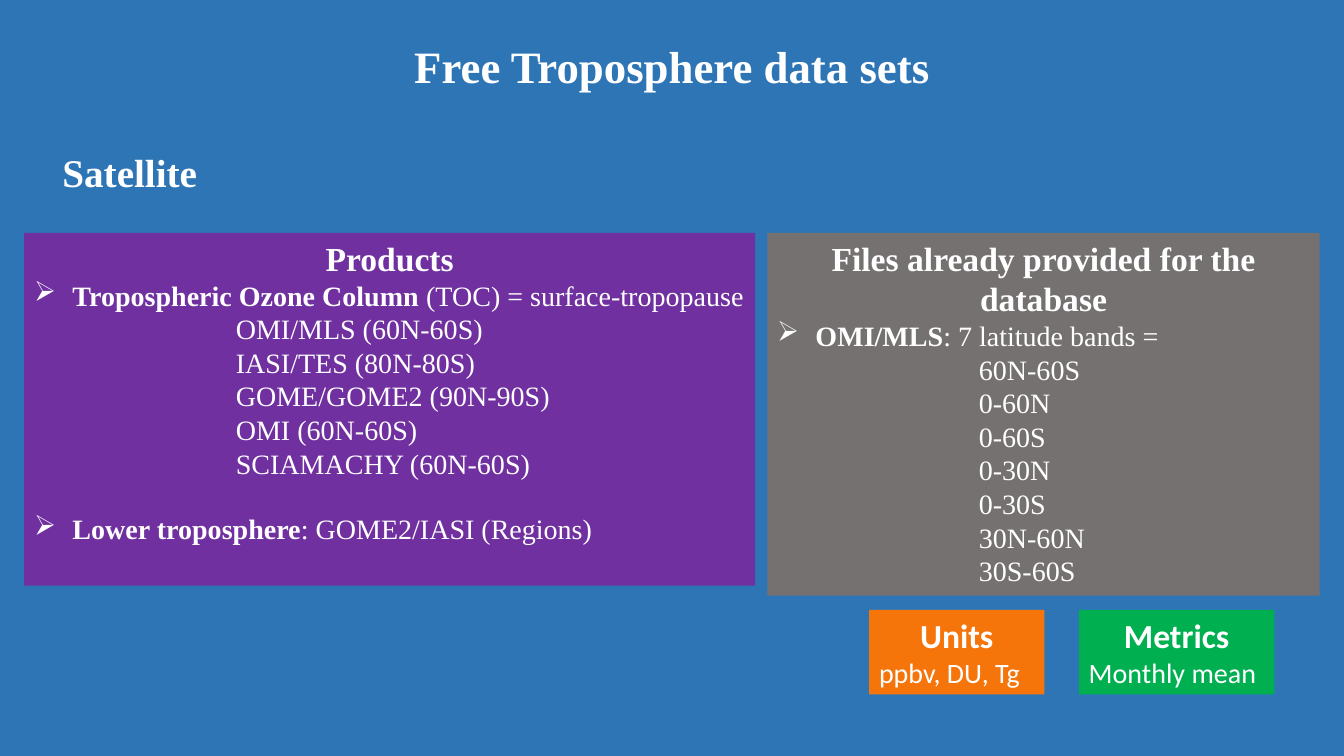
from lxml import etree
from pptx import Presentation, util as u
from pptx.dml.color import RGBColor
from pptx.enum import shapes, text
from pptx.oxml.ns import qn

# Content
TITLE = "Free Troposphere data sets"
SUBTITLE = "Satellite"
PRODUCTS = {
    "heading": "Products",
    "groups": [
        ("Tropospheric Ozone Column ", "(TOC) = surface-tropopause",
         ["OMI/MLS (60N-60S)", "IASI/TES (80N-80S)", "GOME/GOME2 (90N-90S)",
          "OMI (60N-60S)", "SCIAMACHY (60N-60S)"]),
        ("Lower troposphere", ": GOME2/IASI (Regions)", []),
    ],
}
FILES = {
    "heading": "Files already provided for the database",
    "groups": [
        ("OMI/MLS", ": 7 latitude bands =",
         ["60N-60S", "0-60N", "0-60S", "0-30N", "0-30S", "30N-60N", "30S-60S"]),
    ],
}

# Format: places are left, top, width, height in inches
COLOURS = {"background": "2E75B6", "text": "FFFFFF", "products": "7030A0",
           "files": "767171", "units": "F5750B", "metrics": "00B050"}
SERIF, SANS = "Times New Roman", "Calibri"
WIDTH, HEIGHT = 13.33, 7.5
PANEL_TOP, LABEL_TOP, LABEL_HEIGHT = 2.31, 6.05, 0.84
PANELS = [
    (PRODUCTS, "products", (0.24, PANEL_TOP, 7.25, 3.5)),
    (FILES, "files", (7.61, PANEL_TOP, 5.48, 3.6)),
]
LABELS = [
    ("Units", "ppbv, DU, Tg", "units", (8.62, LABEL_TOP, 1.74, LABEL_HEIGHT)),
    ("Metrics", "Monthly mean", "metrics", (10.7, LABEL_TOP, 1.94, LABEL_HEIGHT)),
]
BULLET_INDENT, ITEM_INDENT, GROUP_GAP = 0.38, 2, 23


def colour(name):
    return RGBColor.from_string(COLOURS[name])


def prepare_frame(shape):
    frame = shape.text_frame
    frame.word_wrap = True
    frame.auto_size = text.MSO_AUTO_SIZE.NONE
    frame.vertical_anchor = text.MSO_ANCHOR.TOP
    return frame


def write(frame, *runs, size=20, font=SERIF, centred=False, spacing=1.0,
          before=0, indent=0, bullet=None):
    """Add one paragraph made of (words, bold) runs."""
    paragraph = frame.paragraphs[0]
    if paragraph.runs:
        paragraph = frame.add_paragraph()
    paragraph.alignment = text.PP_ALIGN.CENTER if centred else text.PP_ALIGN.LEFT
    paragraph.line_spacing = spacing
    paragraph.space_before = u.Pt(before)
    properties = paragraph._p.get_or_add_pPr()
    properties.set("marL", str(u.Inches(indent)))
    properties.set("indent", str(-u.Inches(indent) if bullet else 0))
    if bullet:
        etree.SubElement(properties, qn("a:buChar")).set("char", bullet)
    for words, bold in runs:
        run = paragraph.add_run()
        run.text = words
        run.font.size, run.font.name, run.font.bold = u.Pt(size), font, bold
        run.font.color.rgb = colour("text")


def add_box(slide, fill, place):
    box = slide.shapes.add_shape(shapes.MSO_SHAPE.RECTANGLE, *map(u.Inches, place))
    box.shadow.inherit = False
    box.fill.solid()
    box.fill.fore_color.rgb = colour(fill)
    box.line.fill.background()
    return prepare_frame(box)


def main():
    presentation = Presentation()
    presentation.slide_width = u.Inches(WIDTH)
    presentation.slide_height = u.Inches(HEIGHT)
    slide = presentation.slides.add_slide(presentation.slide_layouts[5])
    slide.background.fill.solid()
    slide.background.fill.fore_color.rgb = colour("background")

    # Title and subtitle
    title = slide.shapes.title
    title.left, title.top, title.width, title.height = map(
        u.Inches, (WIDTH / 8, 0.39, WIDTH * 3 / 4, 1.09))
    write(prepare_frame(title), (TITLE, True), size=32, centred=True, spacing=0.9)
    subtitle = slide.shapes.add_textbox(*map(u.Inches, (0.52, 1.48, 12.29, 0.7)))
    write(prepare_frame(subtitle), (SUBTITLE, True), size=28, spacing=0.9)

    # Units and metrics
    for heading, detail, fill, place in LABELS:
        frame = add_box(slide, fill, place)
        write(frame, (heading, True), size=24, font=SANS, centred=True)
        write(frame, (detail, False), font=SANS)

    # Products and files
    for content, fill, place in PANELS:
        frame = add_box(slide, fill, place)
        write(frame, (content["heading"], True), size=24, centred=True)
        for number, (name, detail, items) in enumerate(content["groups"]):
            write(frame, (name, True), (detail, False), indent=BULLET_INDENT,
                  bullet="➢", before=GROUP_GAP if number else 0)
            for item in items:
                write(frame, (item, False), indent=ITEM_INDENT)

    presentation.save("out.pptx")


if __name__ == "__main__":
    main()
